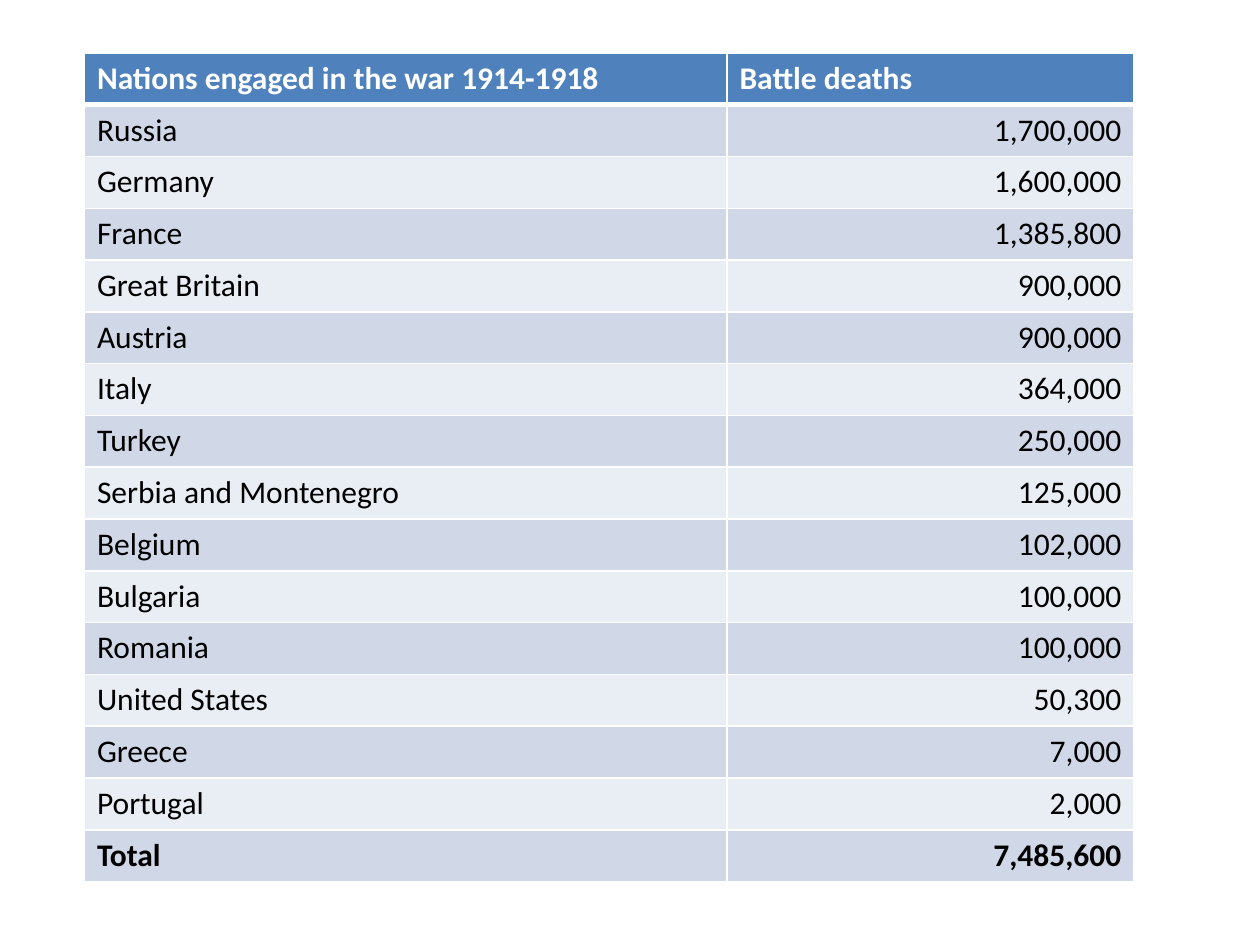
from lxml import etree
from pptx import Presentation
from pptx.dml.color import RGBColor
from pptx.enum.text import MSO_ANCHOR, PP_ALIGN
from pptx.oxml.ns import qn
from pptx.util import Inches, Pt

LEFT, RIGHT = PP_ALIGN.LEFT, PP_ALIGN.RIGHT
TOP = MSO_ANCHOR.TOP
WHITE = RGBColor(0xFF, 0xFF, 0xFF)
BLACK = RGBColor(0x00, 0x00, 0x00)
HEADER_BLUE = RGBColor(0x4F, 0x81, 0xBD)
DARK_BAND = RGBColor(0xD0, 0xD8, 0xE8)
LIGHT_BAND = RGBColor(0xE9, 0xED, 0xF4)

ROWS = [
    ("Nations engaged in the war 1914-1918", "Battle deaths"),
    ("Russia", "1,700,000"),
    ("Germany", "1,600,000"),
    ("France", "1,385,800"),
    ("Great Britain", "900,000"),
    ("Austria", "900,000"),
    ("Italy", "364,000"),
    ("Turkey", "250,000"),
    ("Serbia and Montenegro", "125,000"),
    ("Belgium", "102,000"),
    ("Bulgaria", "100,000"),
    ("Romania", "100,000"),
    ("United States", "50,300"),
    ("Greece", "7,000"),
    ("Portugal", "2,000"),
    ("Total", "7,485,600"),
]
LAST_ROW = len(ROWS) - 1


def add_border(cell, side, width):
    """Draw a white line along one side of a cell."""
    line = etree.SubElement(cell._tc.get_or_add_tcPr(), qn(f"a:ln{side}"), w=str(Pt(width)))
    fill = etree.SubElement(line, qn("a:solidFill"))
    etree.SubElement(fill, qn("a:srgbClr"), val=str(WHITE))


presentation = Presentation()
presentation.slide_width = Inches(10)
presentation.slide_height = Inches(7.5)
slide = presentation.slides.add_slide(presentation.slide_layouts[6])

# Table grid
table = slide.shapes.add_table(
    len(ROWS), 2, Inches(0.67), Inches(0.42), Inches(8.33), Inches(6.58)
).table
table.columns[0].width = Inches(5.1)
table.columns[1].width = Inches(3.23)

# Cells: header, banded nations and bold total
for row_index, texts in enumerate(ROWS):
    is_header = row_index == 0
    if is_header:
        band = HEADER_BLUE
    else:
        band = DARK_BAND if row_index % 2 else LIGHT_BAND

    for column_index, text in enumerate(texts):
        cell = table.cell(row_index, column_index)
        cell.vertical_anchor = TOP

        # Thick rule between the header and the first nation
        add_border(cell, "L", 1)
        add_border(cell, "R", 1)
        add_border(cell, "T", 3 if row_index == 1 else 1)
        add_border(cell, "B", 3 if is_header else 1)
        cell.fill.solid()
        cell.fill.fore_color.rgb = band

        paragraph = cell.text_frame.paragraphs[0]
        paragraph.alignment = RIGHT if column_index == 1 and not is_header else LEFT
        run = paragraph.add_run()
        run.text = text
        run.font.name = "Calibri"
        run.font.size = Pt(18)
        run.font.bold = row_index in (0, LAST_ROW)
        run.font.color.rgb = WHITE if is_header else BLACK

presentation.save("out.pptx")
